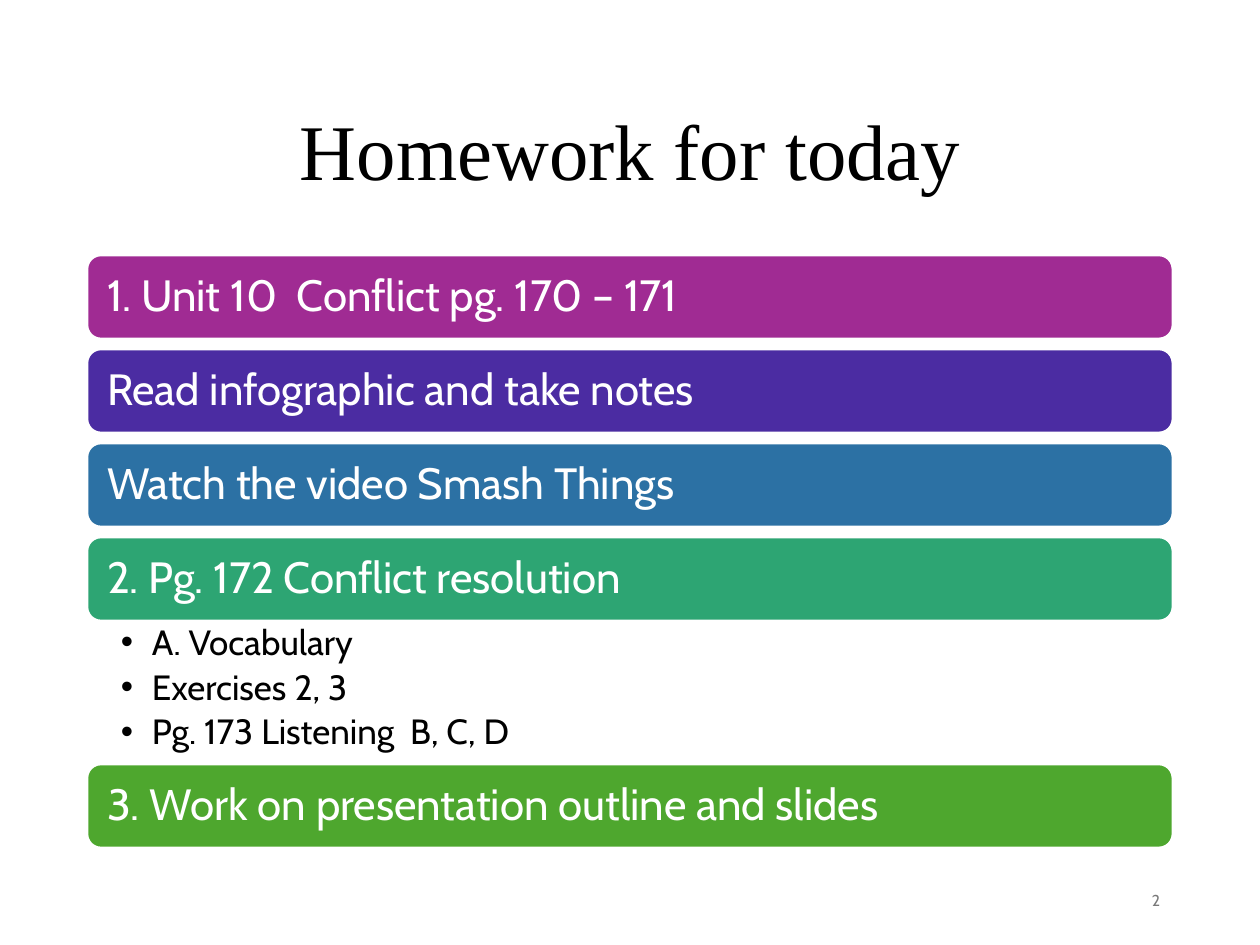
"""Build the homework slide: a title, coloured bars and a short list."""
from lxml import etree
from pptx import Presentation
from pptx.dml.color import RGBColor
from pptx.enum.shapes import MSO_SHAPE
from pptx.enum.text import MSO_ANCHOR, MSO_AUTO_SIZE, PP_ALIGN
from pptx.oxml.ns import qn
from pptx.util import Pt

ROUND = MSO_SHAPE.ROUNDED_RECTANGLE
TOP, MID = MSO_ANCHOR.TOP, MSO_ANCHOR.MIDDLE
LEFT, CENTER, RIGHT = PP_ALIGN.LEFT, PP_ALIGN.CENTER, PP_ALIGN.RIGHT
NO_FIT = MSO_AUTO_SIZE.NONE

TITLE = "Homework for today"
BARS = [
    ("1. Unit 10  Conflict pg. 170 – 171", "A02B93"),
    ("Read infographic and take notes", "4B2CA2"),
    ("Watch the video Smash Things", "2C71A4"),
    ("2. Pg. 172 Conflict resolution", "2DA573"),
    ("3. Work on presentation outline and slides", "4EA72E"),
]
TASKS = ["A. Vocabulary", "Exercises 2, 3", "Pg. 173 Listening  B, C, D"]
PARENT = 3
NUMBER = "2"

X, WIDE = 87, 1086
START, HIGH, GAP = 255, 84, 10
LIST_HIGH = 143
INDENT = 31


def px(n):
    return round(n * 914400 / 126)


def color(code):
    return RGBColor.from_string(code)


def place(shape, x, y, w, h):
    shape.left, shape.top, shape.width, shape.height = map(px, (x, y, w, h))


def style(shape, size, code, font="Cabin", align=LEFT, anchor=MID,
          pads=(13, 6, 13, 6), after=0):
    frame = shape.text_frame
    frame.word_wrap = True
    frame.auto_size = NO_FIT
    frame.vertical_anchor = anchor
    (frame.margin_left, frame.margin_top,
     frame.margin_right, frame.margin_bottom) = map(px, pads)
    for para in frame.paragraphs:
        para.alignment = align
        para.line_spacing = 0.9
        para.space_before, para.space_after = Pt(0), Pt(after)
        for run in para.runs:
            run.font.name = font
            run.font.size = Pt(size)
            run.font.color.rgb = color(code)


def bullet(para):
    props = para._p.get_or_add_pPr()
    props.set("marL", str(px(INDENT)))
    props.set("indent", str(-px(INDENT)))
    etree.SubElement(props, qn("a:buChar")).set("char", "•")


def add_bar(slide, text, fill, y):
    bar = slide.shapes.add_shape(ROUND, 0, 0, 0, 0)
    place(bar, X, y, WIDE, HIGH)
    bar.shadow.inherit = False
    bar.fill.solid()
    bar.fill.fore_color.rgb = color(fill)
    bar.line.color.rgb = color("FFFFFF")
    bar.line.width = Pt(1.5)
    bar.text_frame.text = text
    style(bar, 25, "FFFFFF", pads=(16, 12, 16, 12))


def add_tasks(body, y):
    place(body, X, y, WIDE, LIST_HIGH)
    body.text_frame.text = "\n".join(TASKS)
    style(body, 20, "000000", anchor=TOP, pads=(34, 4, 24, 4), after=4)
    for para in body.text_frame.paragraphs:
        bullet(para)


def main():
    deck = Presentation()
    deck.slide_width, deck.slide_height = px(1260), px(945)
    slide = deck.slides.add_slide(deck.slide_layouts[1])
    title, body = slide.placeholders

    place(title, X, 77, WIDE, 156)
    title.text_frame.text = TITLE
    style(title, 45, "000000", "Times New Roman", CENTER)

    y = START
    for i, (text, fill) in enumerate(BARS):
        add_bar(slide, text, fill, y)
        y += HIGH
        if i == PARENT:
            add_tasks(body, y)
            y += LIST_HIGH
        else:
            y += GAP

    page = slide.shapes.add_textbox(0, 0, 0, 0)
    place(page, 890, 876, 283, 50)
    page.text_frame.text = NUMBER
    style(page, 9, "797979", align=RIGHT)

    deck.save("out.pptx")


if __name__ == "__main__":
    main()
